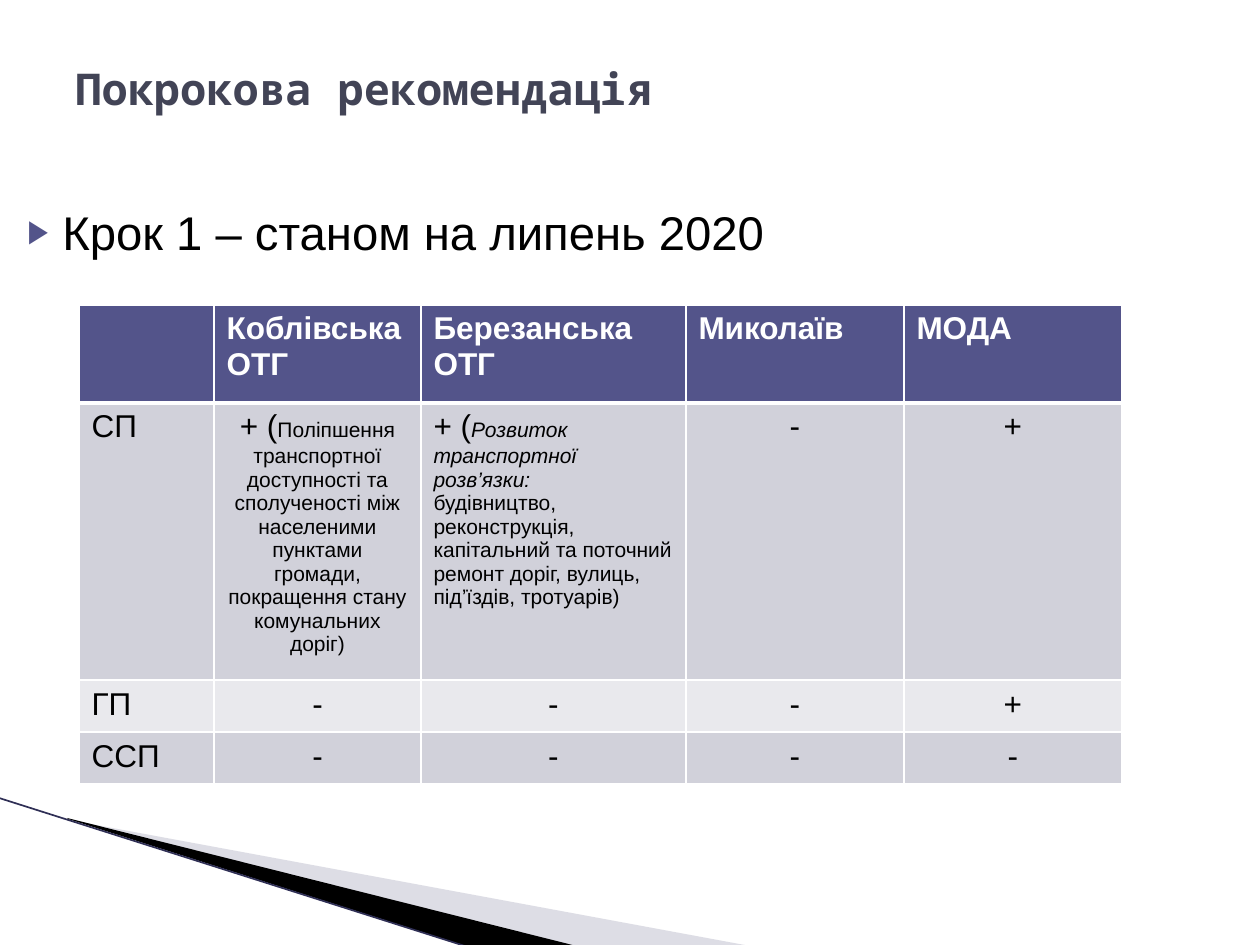
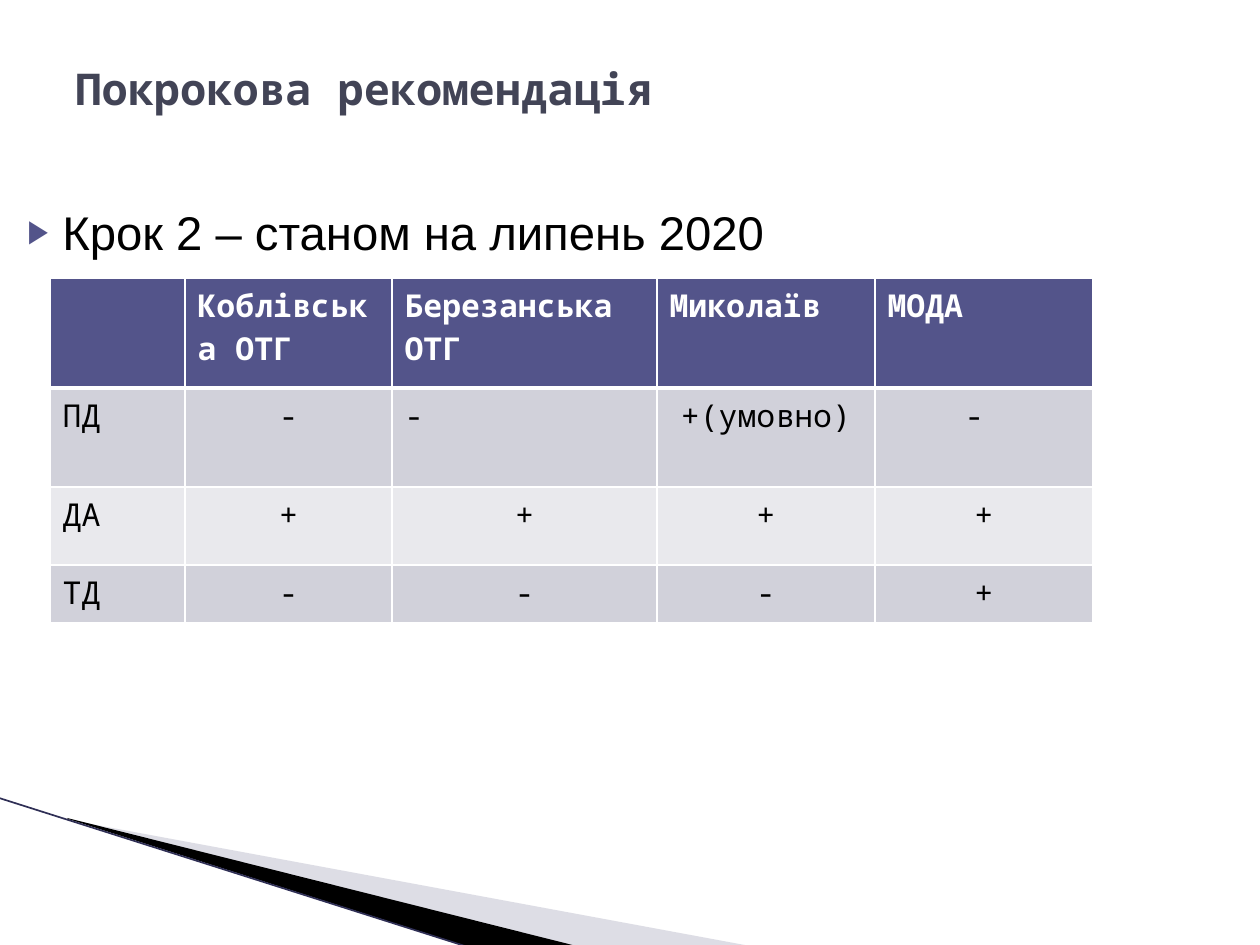
from dataclasses import dataclass

from lxml import etree
from pptx import Presentation
from pptx.dml.color import RGBColor
from pptx.enum import shapes, text
from pptx.oxml import ns
from pptx import util as u

PX_PER_INCH = 126


def px(length: int) -> u.Emu:
    return u.Emu(round(length * 914400 / PX_PER_INCH))


@dataclass(frozen=True)
class Theme:
    accent: str = "53548A"
    title: str = "424456"
    ink: str = "000000"
    white: str = "FFFFFF"
    bands: tuple[str, str] = ("D1D1DA", "E9E9ED")
    wedge: str = "AAAABF"
    wedge_line: str = "2F2F55"
    sans: str = "Arial"
    mono: str = "Noto Sans Mono"
    title_size: int = 25
    step_size: int = 27
    table_size: int = 18
    detail_size: int = 12


THEME = Theme()


@dataclass(frozen=True)
class Box:
    left: int
    top: int
    width: int
    height: int


@dataclass(frozen=True)
class TextRun:
    content: str
    size: int = THEME.table_size
    italic: bool = False


@dataclass(frozen=True)
class Cell:
    paragraphs: tuple[tuple[TextRun, ...], ...]
    centered: bool = True


@dataclass(frozen=True)
class Wedge:
    points: tuple[tuple[int, int], ...]
    color: str
    opacity: int = 100


@dataclass(frozen=True)
class Step:
    heading: str
    left: int
    top: int
    font: str
    row_heights: tuple[int, ...]
    rows: tuple[tuple[str | Cell, ...], ...]


# Shared geometry
TITLE = "Покрокова рекомендація"
TITLE_BOX = Box(63, 39, 1134, 99)
STEP_BOX = Box(0, 197, 1134, 66)
BULLET_MARGIN, BULLET_HANG = 50, 35
COLUMN_WIDTHS = (135, 207, 265, 218, 218)
WEDGES = (
    Wedge(((69, 820), (750, 946), (575, 946), (69, 819)), THEME.wedge, 40),
    Wedge(((67, 818), (576, 946), (469, 947), (68, 819)), THEME.ink),
)
WEDGE_LINE = (-1, 798, 468, 947)

# Table contents
HEADER = ("", "Коблівська ОТГ", "Березанська ОТГ", "Миколаїв", "МОДА")
ACCESS = Cell(((
    TextRun("+ ("),
    TextRun("Поліпшення транспортної доступності та сполученості між населеними "
            "пунктами громади, покращення стану комунальних доріг)", THEME.detail_size),
),))
ROADS = Cell((
    (TextRun("+ ("),
     TextRun("Розвиток транспортної розв’язки:", THEME.detail_size, True)),
    (TextRun("будівництво, реконструкція, капітальний та поточний ремонт доріг, "
             "вулиць, під’їздів, тротуарів)", THEME.detail_size),),
), centered=False)
LEFT_MINUS = Cell(((TextRun("-"),),), centered=False)

# Both tables start below the heading box
STEPS = (
    Step("Крок 1 – станом на липень 2020", 79, 305, THEME.sans, (98, 197, 52, 52), (
        HEADER,
        ("СП", ACCESS, ROADS, "-", "+"),
        ("ГП", "-", "-", "-", "+"),
        ("ССП", "-", "-", "-", "-"),
    )),
    Step("Крок 2 – станом на липень 2020", 50, 278, THEME.mono, (110, 99, 78, 58), (
        HEADER,
        ("ПД", "-", LEFT_MINUS, "+(умовно)", "- "),
        ("ДА", "+", "+", "+", "+"),
        ("ТД", "-", "-", "-", "+"),
    )),
)


def add_element(parent, tag: str, **attributes: str):
    element = etree.SubElement(parent, ns.qn(tag))
    for name, value in attributes.items():
        element.set(name, value)
    return element


def add_run(paragraph, content: str, font: str, size: int, color: str,
            bold: bool = False, italic: bool = False) -> None:
    run = paragraph.add_run()
    run.text = content
    run.font.name = font
    run.font.size = u.Pt(size)
    run.font.bold = bold
    run.font.italic = italic
    run.font.color.rgb = RGBColor.from_string(color)


def add_text_box(slide, box: Box, anchor):
    shape = slide.shapes.add_textbox(
        px(box.left), px(box.top), px(box.width), px(box.height))
    shape.text_frame.word_wrap = True
    shape.text_frame.vertical_anchor = anchor
    return shape.text_frame.paragraphs[0]


# Corner decoration
def draw_corner(slide) -> None:
    for wedge in WEDGES:
        start, *others = [(px(x), px(y)) for x, y in wedge.points]
        builder = slide.shapes.build_freeform(*start)
        builder.add_line_segments(others, close=True)
        shape = builder.convert_to_shape()
        shape.shadow.inherit = False
        shape.line.fill.background()
        shape.fill.solid()
        shape.fill.fore_color.rgb = RGBColor.from_string(wedge.color)
        if wedge.opacity < 100:
            color = shape._element.spPr.find(ns.qn("a:solidFill"))[0]
            add_element(color, "a:alpha", val=str(wedge.opacity * 1000))
    line = slide.shapes.add_connector(
        shapes.MSO_CONNECTOR.STRAIGHT, *(px(value) for value in WEDGE_LINE))
    line.line.color.rgb = RGBColor.from_string(THEME.wedge_line)
    line.line.width = u.Pt(0.95)
    add_element(line._element.spPr, "a:effectLst")


# Heading with a triangular bullet, then the slide title
def draw_headings(slide, heading: str) -> None:
    paragraph = add_text_box(slide, STEP_BOX, text.MSO_ANCHOR.TOP)
    properties = paragraph._p.get_or_add_pPr()
    properties.set("marL", str(px(BULLET_MARGIN)))
    properties.set("indent", str(-px(BULLET_HANG)))
    add_element(add_element(properties, "a:buClr"), "a:srgbClr", val=THEME.accent)
    add_element(properties, "a:buSzPct", val="68000")
    add_element(properties, "a:buFont", typeface=THEME.sans)
    add_element(properties, "a:buChar", char="▶")
    add_run(paragraph, heading, THEME.sans, THEME.step_size, THEME.ink)

    paragraph = add_text_box(slide, TITLE_BOX, text.MSO_ANCHOR.MIDDLE)
    add_run(paragraph, TITLE, THEME.mono, THEME.title_size, THEME.title, bold=True)


def set_borders(table_cell, row_index: int) -> None:
    properties = table_cell._tc.get_or_add_tcPr()
    widths = {"L": 1, "R": 1, "T": 3 if row_index == 1 else 1,
              "B": 3 if row_index == 0 else 1}
    for side, width in widths.items():
        border = add_element(properties, f"a:ln{side}", w=str(u.Pt(width)))
        add_element(add_element(border, "a:solidFill"), "a:srgbClr", val=THEME.white)


def fill_cell(table_cell, content: str | Cell, font: str,
              row_index: int, column_index: int) -> None:
    is_header = row_index == 0
    if isinstance(content, str):
        runs = (TextRun(content),) if content else ()
        content = Cell((runs,), centered=not is_header and column_index > 0)
    set_borders(table_cell, row_index)
    table_cell.fill.solid()
    table_cell.fill.fore_color.rgb = RGBColor.from_string(
        THEME.accent if is_header else THEME.bands[(row_index - 1) % 2])
    frame = table_cell.text_frame
    for index, runs in enumerate(content.paragraphs):
        paragraph = frame.add_paragraph() if index else frame.paragraphs[0]
        paragraph.alignment = (
            text.PP_ALIGN.CENTER if content.centered else text.PP_ALIGN.LEFT)
        for run in runs:
            add_run(paragraph, run.content, font, run.size,
                    THEME.white if is_header else THEME.ink, is_header, run.italic)


# Readiness table
def draw_table(slide, step: Step) -> None:
    table = slide.shapes.add_table(
        len(step.rows), len(COLUMN_WIDTHS), px(step.left), px(step.top),
        px(sum(COLUMN_WIDTHS)), px(sum(step.row_heights))).table
    for column, width in zip(table.columns, COLUMN_WIDTHS):
        column.width = px(width)
    for row_index, (row, height) in enumerate(zip(step.rows, step.row_heights)):
        table.rows[row_index].height = px(height)
        for column_index, content in enumerate(row):
            fill_cell(table.cell(row_index, column_index), content, step.font,
                      row_index, column_index)


def main() -> None:
    presentation = Presentation()
    presentation.slide_width = px(1260)
    presentation.slide_height = px(945)
    for step in STEPS:
        slide = presentation.slides.add_slide(presentation.slide_layouts[6])
        draw_corner(slide)
        draw_headings(slide, step.heading)
        draw_table(slide, step)
    presentation.save("out.pptx")


if __name__ == "__main__":
    main()
